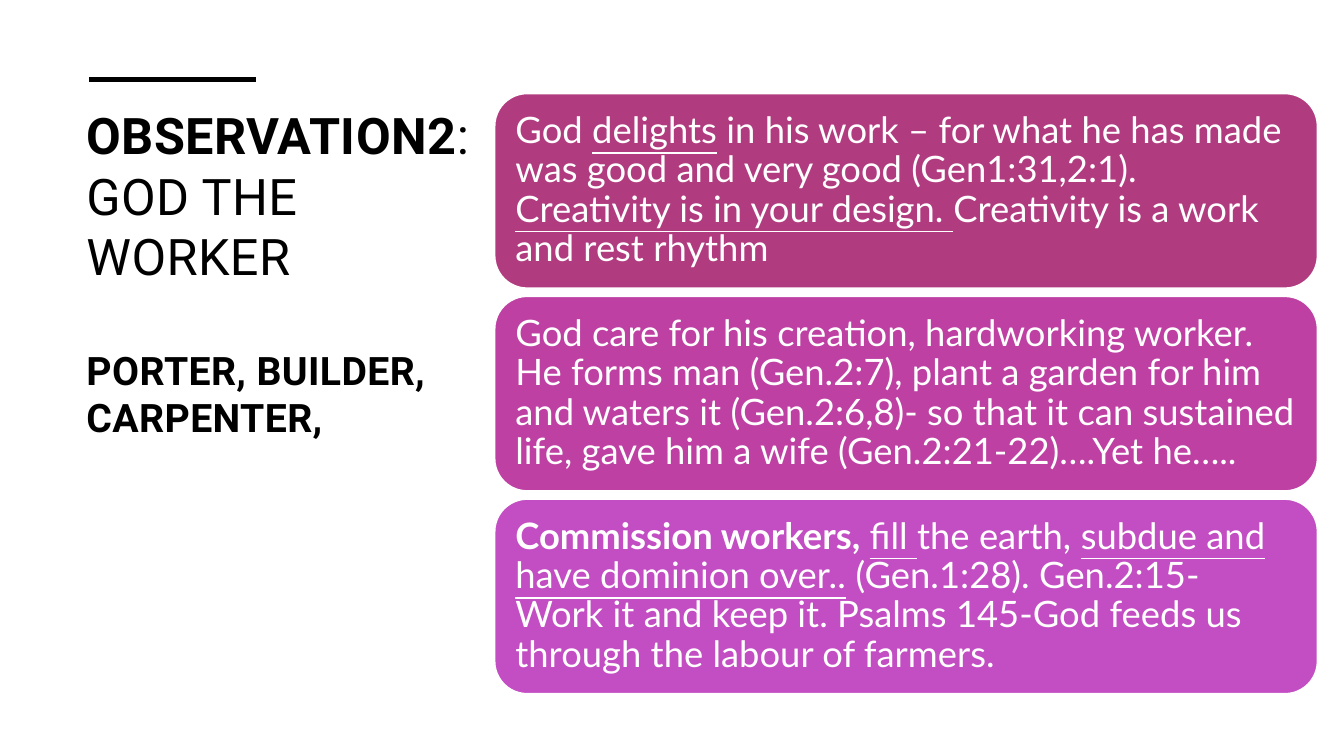
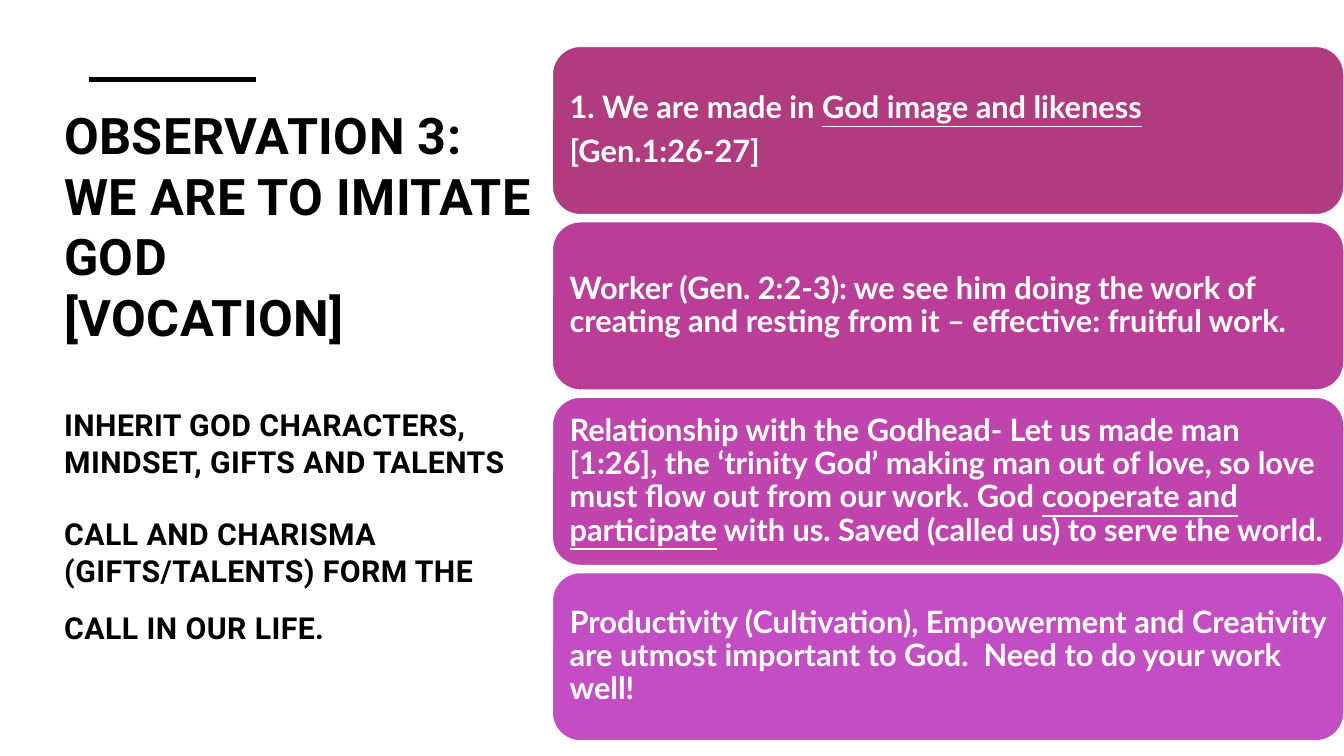
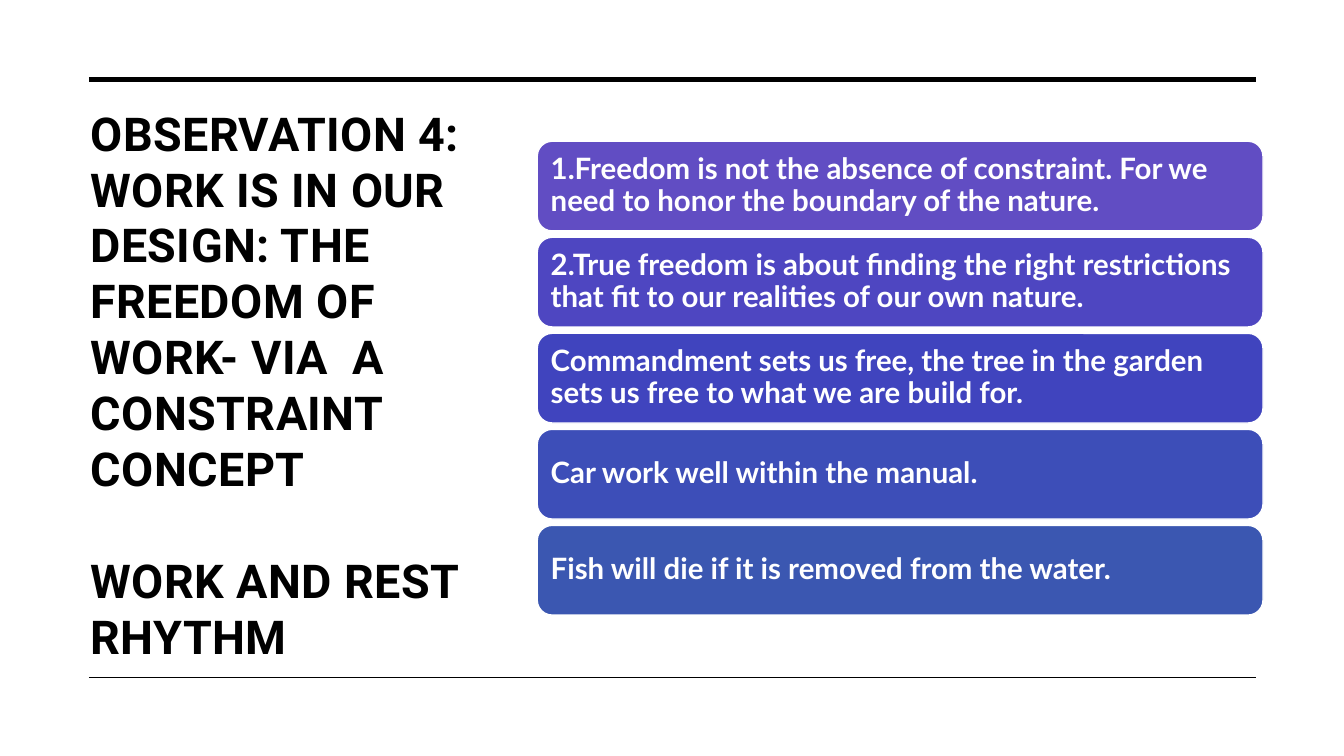
from lxml.etree import SubElement
from pptx import Presentation
from pptx.dml.color import RGBColor
from pptx.enum.shapes import MSO_CONNECTOR as Connector, MSO_SHAPE as Shape
from pptx.enum.text import MSO_ANCHOR as Anchor, PP_ALIGN as Align
from pptx.oxml.ns import qn
from pptx.util import Cm, Pt


def color(hex_code):
    return RGBColor.from_string(hex_code)


class Deck:
    """Hold the shared style and the slide being built."""

    INK, PAPER = "000000", "FFFFFF"
    TITLE_FONT, CARD_FONT = "Roboto", "Lato"
    TITLE_TOP, TITLE_HEIGHT = 2.51, 11.05
    RULE_LEFT, RULE_TOP, RULE_WEIGHT = 2.24, 2.01, 3.5
    LEADING, CARD_LEADING, CARD_GAP = 1.2, 0.9, 0.35

    def __init__(self):
        self.presentation = Presentation()
        self.presentation.slide_width = Cm(33.87)
        self.presentation.slide_height = Cm(19.05)
        self.slide = None

    def new_slide(self):
        blank = self.presentation.slide_layouts[6]
        self.slide = self.presentation.slides.add_slide(blank)

    def runs(self, paragraph, runs, size, font, ink, tracking=None):
        for text, style in runs:
            run = paragraph.add_run()
            run.text = text
            run.font.name = font
            run.font.size = Pt(size)
            run.font.color.rgb = color(ink)
            run.font.bold = "b" in style
            run.font.underline = "u" in style
            if tracking:
                run.font._element.set("spc", str(tracking))

    def paragraphs(self, frame, count):
        for _ in range(count - 1):
            frame.add_paragraph()
        return frame.paragraphs

    def title(self, left, width, lines):
        box = self.slide.shapes.add_textbox(
            Cm(left), Cm(self.TITLE_TOP), Cm(width), Cm(self.TITLE_HEIGHT))
        frame = box.text_frame
        frame.word_wrap = True
        for paragraph, (size, gap, runs) in zip(self.paragraphs(frame, len(lines)), lines):
            paragraph.line_spacing = Pt(size * self.LEADING)
            paragraph.space_before = Pt(gap)
            self.runs(paragraph, runs, size, self.TITLE_FONT, self.INK, 30)

    def rule(self, right, top=RULE_TOP, weight=RULE_WEIGHT):
        line = self.slide.shapes.add_connector(
            Connector.STRAIGHT, Cm(self.RULE_LEFT), Cm(top), Cm(right), Cm(top))
        line.line.color.rgb = color(self.INK)
        line.line.width = Pt(weight)
        SubElement(line._element.spPr, qn("a:effectLst"))

    def card(self, left, top, width, height, fill, size, inset, lines):
        shape = self.slide.shapes.add_shape(
            Shape.ROUNDED_RECTANGLE, Cm(left), Cm(top), Cm(width), Cm(height))
        shape.shadow.inherit = False
        shape.fill.solid()
        shape.fill.fore_color.rgb = color(fill)
        shape.line.color.rgb = color(self.PAPER)
        shape.line.width = Pt(1)
        frame = shape.text_frame
        frame.word_wrap = True
        frame.vertical_anchor = Anchor.MIDDLE
        frame.margin_left = frame.margin_right = Cm(inset)
        frame.margin_top = frame.margin_bottom = Cm(inset)
        for index, paragraph in enumerate(self.paragraphs(frame, len(lines))):
            paragraph.alignment = Align.LEFT
            paragraph.line_spacing = self.CARD_LEADING
            if index:
                paragraph.space_before = Pt(size * self.CARD_GAP)
            self.runs(paragraph, lines[index], size, self.CARD_FONT, self.PAPER)

    def cards(self, left, top, width, height, pitch, size, inset, cards):
        for index, (fill, *lines) in enumerate(cards):
            self.card(left, top + index * pitch, width, height, fill, size, inset, lines)


def god_the_worker(deck):
    deck.new_slide()
    deck.title(1.93, 10.87, [
        (36, 0, [("OBSERVATION2", "b"), (": GOD THE WORKER", "")]),
        (28, 43, [("PORTER, BUILDER, CARPENTER,", "b")]),
    ])
    deck.rule(6.45)
    deck.cards(12.47, 2.36, 20.73, 4.9, 5.11, 26, 0.28, [
        ("B13B7F", [
            ("God ", ""), ("delights", "u"),
            (" in his work – for what he has made was good and very good (Gen1:31,2:1). ", ""),
            ("Creativity is in your design. ", "u"),
            ("Creativity is a work and rest rhythm", "")]),
        ("BE40A3", [
            ("God care for his creation, hardworking worker. He forms man (Gen.2:7), "
             "plant a garden for him and waters it (Gen.2:6,8)- so that it can sustained "
             "life, gave him a wife (Gen.2:21-22)….Yet he…..", "")]),
        ("C34DC2", [
            ("Commission workers, ", "b"), ("fill ", "u"), ("the earth, ", ""),
            ("subdue and have dominion over..", "u"),
            (" (Gen.1:28). Gen.2:15- Work it and keep it. Psalms 145-God feeds us "
             "through the labour of farmers.", "")]),
    ])


def imitate_god(deck):
    deck.new_slide()
    deck.title(1.37, 12.52, [
        (36, 0, [("OBSERVATION 3:", "b")]),
        (36, 0, [("WE ARE TO IMITATE GOD", "b")]),
        (36, 0, [("[VOCATION]", "b")]),
        (21.6, 43, [("INHERIT GOD CHARACTERS, MINDSET, GIFTS AND TALENTS", "b")]),
        (21.6, 26, [("CALL AND CHARISMA (GIFTS/TALENTS) FORM THE", "b")]),
        (21.6, 15, [("CALL IN OUR LIFE.", "b")]),
    ])
    deck.rule(6.45)
    deck.cards(13.92, 1.17, 19.95, 4.24, 4.42, 22, 0.23, [
        ("B13B7F",
         [("1. We are made in ", "b"), ("God image and likeness", "bu")],
         [("[Gen.1:26-27]", "b")]),
        ("BA3E97", [
            ("Worker (Gen. 2:2-3): we see him doing the work of creating and resting "
             "from it – effective: fruitful work.", "b")]),
        ("C044AE", [
            ("Relationship with the Godhead- Let us made man [1:26], the ‘trinity God’ "
             "making man out of love, so love must flow out from our work. God ", "b"),
            ("cooperate and participate", "bu"),
            (" with us. Saved (called us) to serve the world.", "b")]),
        ("C34DC2", [
            ("Productivity (Cultivation), Empowerment and Creativity are utmost "
             "important to God.  Need to do your work well!", "b")]),
    ])


def freedom_of_work(deck):
    deck.new_slide()
    deck.title(2.03, 10.77, [
        (33.3, 0, [("OBSERVATION 4: WORK IS IN OUR DESIGN: THE FREEDOM OF "
                    "WORK- VIA  A CONSTRAINT CONCEPT", "b")]),
        (33.3, 40, [("WORK AND REST RHYTHM", "b")]),
    ])
    deck.rule(31.65)
    deck.rule(31.65, 17.07, 1)
    deck.cards(13.54, 3.56, 18.29, 2.26, 2.42, 21, 0.23, [
        ("614DC3", [("1.Freedom is not the absence of constraint. For we need to honor "
                     "the boundary of the nature.", "b")]),
        ("4E46C1", [("2.True freedom is about finding the right restrictions that fit "
                     "to our realities of our own nature.", "b")]),
        ("4044BE", [("Commandment sets us free, the tree in the garden sets us free to "
                     "what we are build for.", "b")]),
        ("3D4EB8", [("Car work well within the manual.", "b")]),
        ("3B57B1", [("Fish will die if it is removed from the water.", "b")]),
    ])


def main():
    deck = Deck()
    god_the_worker(deck)
    imitate_god(deck)
    freedom_of_work(deck)
    deck.presentation.save("out.pptx")


if __name__ == "__main__":
    main()
